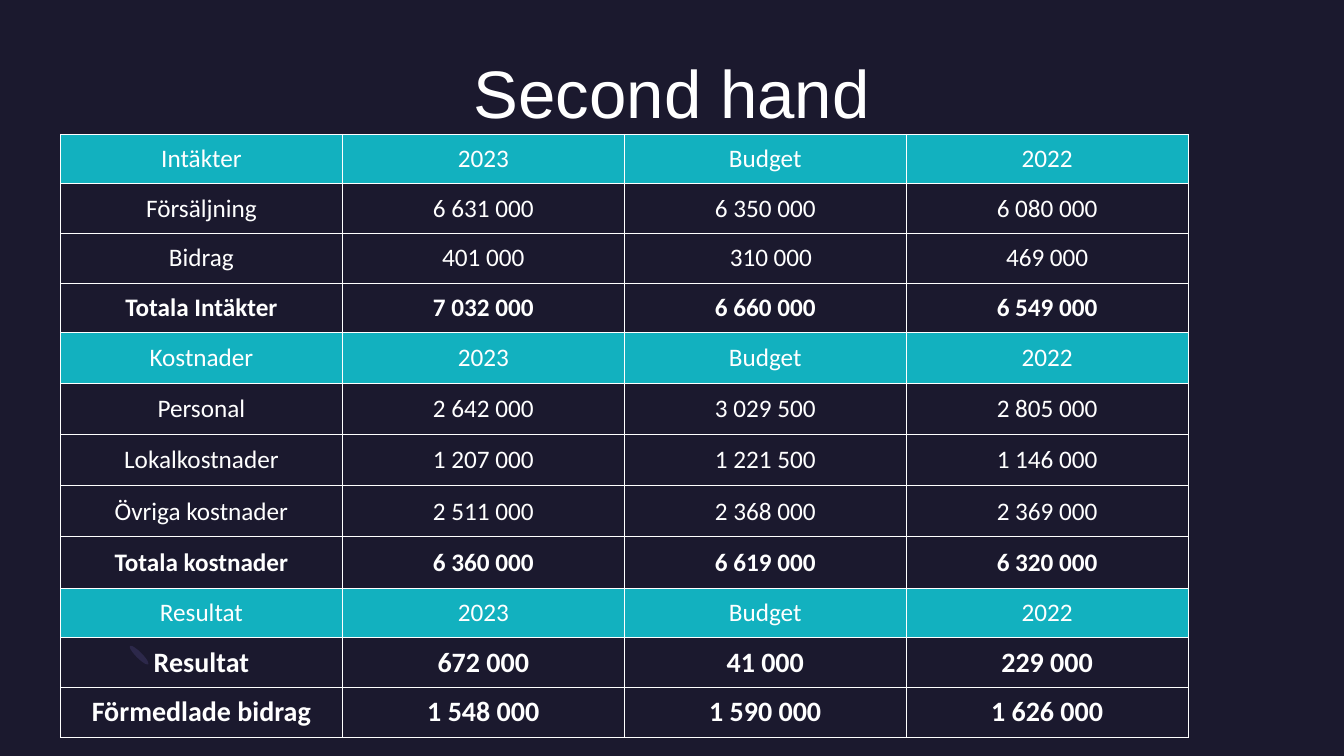
from lxml import etree
from pptx import Presentation
from pptx import util as u
from pptx.dml.color import RGBColor
from pptx.enum import shapes, text
from pptx.oxml.ns import qn

COLORS = {"background": "1B192E", "white": "FFFFFF", "header": "12B1BF", "accent": "2C284A"}
YEARS = ["2023", "Budget", "2022"]
LEFT, TABLE_TOP, COLUMN_WIDTH = 43.2, 96, 201.4

INCOME = [
    ["Intäkter", *YEARS],
    ["Försäljning", "6 631 000", "6 350 000", "6 080 000"],
    ["Bidrag", "401 000", "310 000", "469 000"],
    ["Totala Intäkter", "7 032 000", "6 660 000", "6 549 000"],
]
COSTS = [
    ["Kostnader", *YEARS],
    ["Personal", "2 642 000", "3 029 500", "2 805 000"],
    ["Lokalkostnader", "1 207 000", "1 221 500", "1 146 000"],
    ["Övriga kostnader", "2 511 000", "2 368 000", "2 369 000"],
    ["Totala kostnader", "6 360 000", "6 619 000", "6 320 000"],
]
RESULT = [
    ["Resultat", *YEARS],
    ["Resultat", "672 000", "41 000", "229 000"],
    ["Förmedlade bidrag", "1 548 000", "1 590 000", "1 626 000"],
]


def rgb(name):
    return RGBColor.from_string(COLORS[name])


class SlideBuilder:
    def __init__(self, presentation):
        self.title_font, self.table_font = "Arial", "Calibri"
        self.slide = presentation.slides.add_slide(presentation.slide_layouts[5])
        fill = self.slide.background.fill
        fill.solid()
        fill.fore_color.rgb = rgb("background")

    def style(self, paragraph, font_name, size, bold=False):
        paragraph.alignment = text.PP_ALIGN.CENTER
        paragraph.font.name = font_name
        paragraph.font.size = u.Pt(size)
        paragraph.font.bold = bold
        paragraph.font.color.rgb = rgb("white")

    def title(self, wording, left, top, width, height):
        shape = self.slide.shapes.title
        shape.left, shape.top = u.Pt(left), u.Pt(top)
        shape.width, shape.height = u.Pt(width), u.Pt(height)
        frame = shape.text_frame
        frame.text = wording
        frame.auto_size = text.MSO_AUTO_SIZE.NONE
        frame.vertical_anchor = text.MSO_ANCHOR.TOP
        frame.margin_left = frame.margin_right = frame.margin_top = frame.margin_bottom = 0
        paragraph = frame.paragraphs[0]
        paragraph.line_spacing = 0.9
        self.style(paragraph, self.title_font, 48)

    def ellipse(self, left, top, width, height, rotation):
        shape = self.slide.shapes.add_shape(
            shapes.MSO_SHAPE.OVAL, u.Pt(left), u.Pt(top), u.Pt(width), u.Pt(height))
        shape.rotation = rotation
        shape.shadow.inherit = False
        shape.fill.solid()
        shape.fill.fore_color.rgb = rgb("accent")
        shape.line.fill.background()

    def borders(self, cell):
        properties = cell._tc.get_or_add_tcPr()
        for side in ("a:lnL", "a:lnR", "a:lnT", "a:lnB"):
            line = etree.SubElement(properties, qn(side), w=str(u.Pt(0.75)))
            fill = etree.SubElement(line, qn("a:solidFill"))
            etree.SubElement(fill, qn("a:srgbClr"), val=COLORS["white"])

    def table(self, rows, top, row_height, bold_rows, bold_size=18):
        """Add a table with a coloured header row and return it."""
        columns = len(rows[0])
        table = self.slide.shapes.add_table(
            len(rows), columns, u.Pt(LEFT), u.Pt(top),
            u.Pt(COLUMN_WIDTH * columns), u.Pt(row_height * len(rows))).table
        table.horz_banding = False
        for column in table.columns:
            column.width = u.Pt(COLUMN_WIDTH)
        for r, values in enumerate(rows):
            table.rows[r].height = u.Pt(row_height)
            bold = r in bold_rows
            for c, value in enumerate(values):
                cell = table.cell(r, c)
                cell.text = value
                cell.vertical_anchor = text.MSO_ANCHOR.MIDDLE
                self.style(cell.text_frame.paragraphs[0], self.table_font,
                           bold_size if bold else 18, bold)
                self.borders(cell)
                if r == 0:
                    cell.fill.solid()
                    cell.fill.fore_color.rgb = rgb("header")
                else:
                    cell.fill.background()
        return table


def main():
    presentation = Presentation()
    presentation.slide_width, presentation.slide_height = u.Pt(960), u.Pt(540)
    builder = SlideBuilder(presentation)
    builder.title("Second hand", LEFT, 43.2, 873.4, 105)
    builder.ellipse(97.2, 458.6, 4.3, 18.7, 135)

    costs_top = TABLE_TOP + 35.4 * len(INCOME)
    result_top = costs_top + 36.5 * len(COSTS)
    income = builder.table(INCOME, TABLE_TOP, 35.4, {3})
    income.cell(2, 2).margin_left = u.Pt(15.3)
    builder.table(COSTS, costs_top, 36.5, {4})
    builder.table(RESULT, result_top, 35.5, {1, 2}, bold_size=20)
    presentation.save("out.pptx")


if __name__ == "__main__":
    main()
